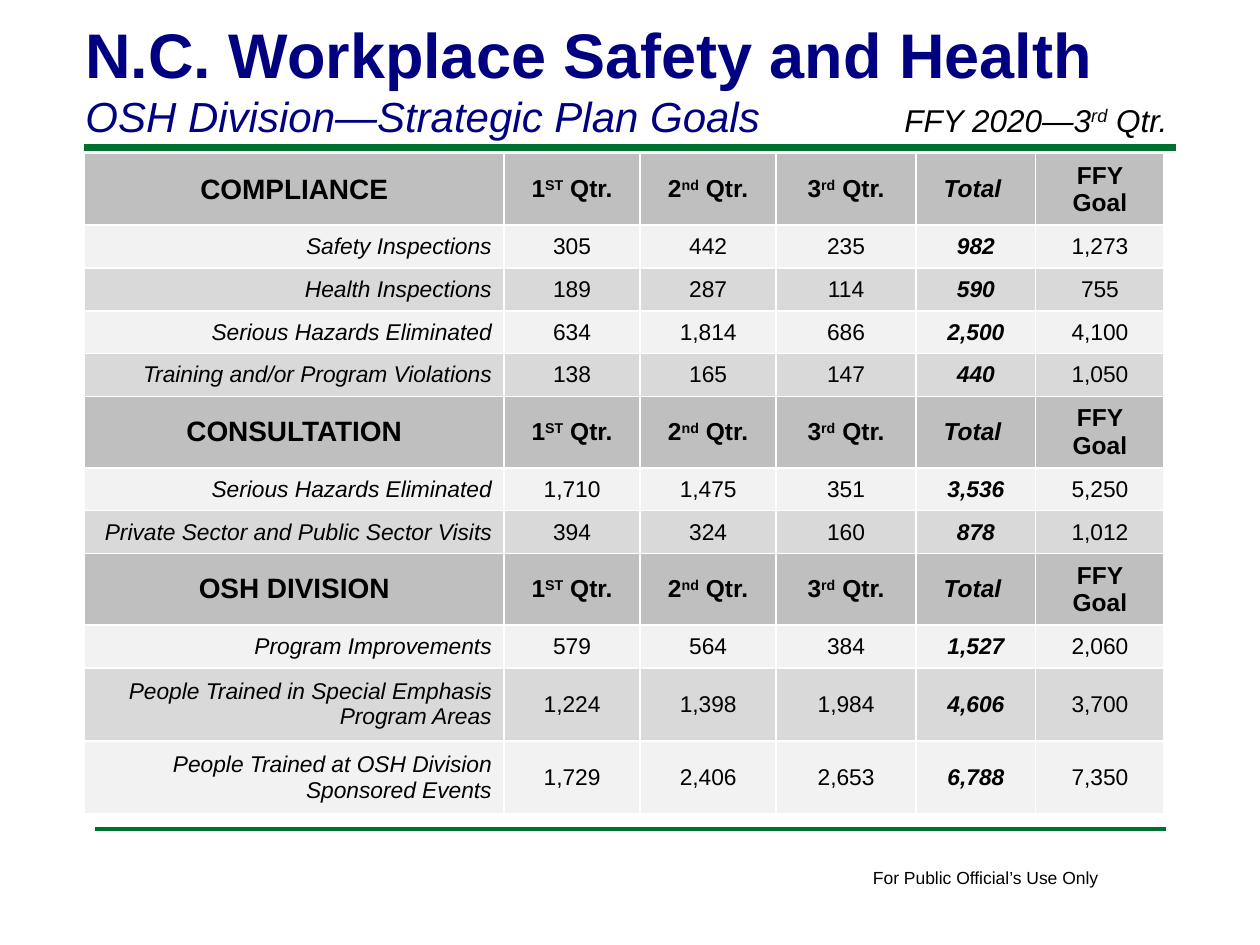
from lxml import etree
from pptx import Presentation
from pptx.dml.color import RGBColor
from pptx.enum import shapes, text
from pptx.oxml.ns import qn
from pptx.util import Inches, Pt


def rgb(value):
    return RGBColor.from_string(value)


def write(p, content, size, color="000000", bold=False, italic=False):
    for i, part in enumerate(content.split("^")):
        r = p.add_run()
        r.text = part
        r.font.name = "Arial"
        r.font.size = Pt(size)
        r.font.bold = bold
        r.font.italic = italic
        r.font.color.rgb = rgb(color)
        if i % 2:
            r.font._element.set("baseline", "30000")


prs = Presentation()
prs.slide_width, prs.slide_height = Inches(10), Inches(7.5)
s = prs.slides.add_slide(prs.slide_layouts[6])

for x1, x2, y, weight in [(0.67, 9.33, 1.17, 4), (0.75, 9.25, 6.58, 2)]:
    rule = s.shapes.add_connector(
        shapes.MSO_CONNECTOR.STRAIGHT, Inches(x1), Inches(y), Inches(x2), Inches(y))
    rule.line.color.rgb = rgb("007030")
    rule.line.width = Pt(weight)
    etree.SubElement(rule._element.spPr, qn("a:effectLst"))

footer = s.shapes.add_textbox(Inches(6.83), Inches(6.83), Inches(2.01), Inches(0.27))
footer.text_frame.word_wrap = False
write(footer.text_frame.paragraphs[0], "For Public Official’s Use Only", 10)

title = s.shapes.add_textbox(Inches(0.58), Inches(0.06), Inches(8.25), Inches(1.11))
tf = title.text_frame
tf.word_wrap = True
tf.vertical_anchor = text.MSO_ANCHOR.BOTTOM
write(tf.paragraphs[0], "N.C. Workplace Safety and Health", 36, "000080", bold=True)
write(tf.add_paragraph(), "OSH Division—Strategic Plan Goals", 24, "000080", italic=True)

sections = [
    ("COMPLIANCE", [
        ("Safety Inspections", "305", "442", "235", "982", "1,273"),
        ("Health Inspections", "189", "287", "114", "590", "755"),
        ("Serious Hazards Eliminated", "634", "1,814", "686", "2,500", "4,100"),
        ("Training and/or Program Violations", "138", "165", "147", "440", "1,050"),
    ]),
    ("CONSULTATION", [
        ("Serious Hazards Eliminated", "1,710", "1,475", "351", "3,536", "5,250"),
        ("Private Sector and Public Sector Visits", "394", "324", "160", "878", "1,012"),
    ]),
    ("OSH DIVISION", [
        ("Program Improvements", "579", "564", "384", "1,527", "2,060"),
        ("People Trained in Special Emphasis Program Areas",
         "1,224", "1,398", "1,984", "4,606", "3,700"),
        ("People Trained at OSH Division Sponsored Events",
         "1,729", "2,406", "2,653", "6,788", "7,350"),
    ]),
]
headings = ("1^ST^ Qtr.", "2^nd^ Qtr.", "3^rd^ Qtr.", "Total ", "FFY Goal")
rows = []
for name, goals in sections:
    rows.append(("BFBFBF", True, (name,) + headings))
    for i, goal in enumerate(goals):
        rows.append((("F2F2F2", "D9D9D9")[i % 2], False, goal))

widths = [3.33, 1.08, 1.08, 1.11, 0.95, 1.02]
heights = [0.55, 0.34, 0.34, 0.34, 0.34, 0.55, 0.34, 0.34, 0.55, 0.34, 0.58, 0.58]
table = s.shapes.add_table(
    len(rows), len(widths), Inches(0.67), Inches(1.22), Inches(8.58), Inches(5.25)).table
table.first_row = False
table.horz_banding = False
for column, width in zip(table.columns, widths):
    column.width = Inches(width)
for row, height in zip(table.rows, heights):
    row.height = Inches(height)

for y, (fill, header, values) in enumerate(rows):
    for x, value in enumerate(values):
        cell = table.cell(y, x)
        cell.vertical_anchor = text.MSO_ANCHOR.MIDDLE
        tcPr = cell._tc.get_or_add_tcPr()
        for side in ("lnL", "lnR", "lnT", "lnB"):
            ln = etree.SubElement(tcPr, qn("a:" + side), w=str(Pt(1)))
            solid = etree.SubElement(ln, qn("a:solidFill"))
            etree.SubElement(solid, qn("a:srgbClr"), val="FFFFFF")
        cell.fill.solid()
        cell.fill.fore_color.rgb = rgb(fill)
        p = cell.text_frame.paragraphs[0]
        label, total = x == 0, x == 4
        p.alignment = text.PP_ALIGN.RIGHT if label and not header else text.PP_ALIGN.CENTER
        size = (16 if label else 14) if header else 13
        write(p, value, size, bold=header or total, italic=total or (label and not header))

period = s.shapes.add_textbox(Inches(7.08), Inches(0.75), Inches(2.5), Inches(0.4))
period.text_frame.word_wrap = True
write(period.text_frame.paragraphs[0], "FFY 2020—3^rd^ Qtr.", 18, italic=True)

prs.save("out.pptx")
